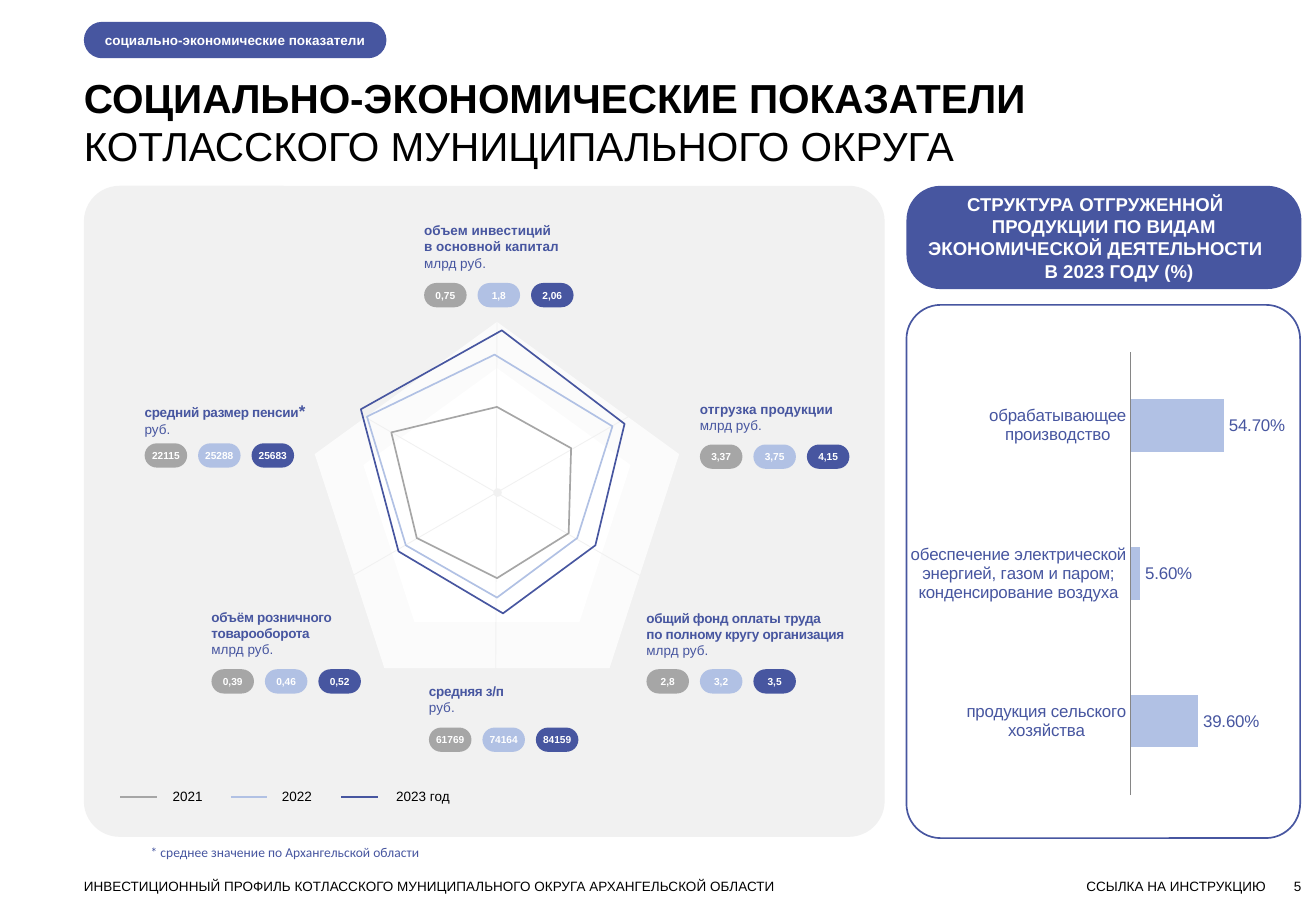
import pptx
import pptx.util
import pptx.chart.data
import pptx.dml.color
import pptx.enum.chart
import pptx.enum.shapes
import pptx.enum.text
import pptx.oxml

RGBColor = pptx.dml.color.RGBColor
INDIGO = RGBColor(0x47, 0x56, 0xA0)
SKY = RGBColor(0xB1, 0xC1, 0xE4)
GRAY = RGBColor(0xA6, 0xA6, 0xA6)
PANEL = RGBColor(0xF1, 0xF1, 0xF1)
PALE = RGBColor(0xFB, 0xFB, 0xFB)
AXIS = RGBColor(0x86, 0x86, 0x86)
WHITE = RGBColor(0xFF, 0xFF, 0xFF)
BLACK = RGBColor(0, 0, 0)
YEAR_COLORS = [GRAY, SKY, INDIGO]

MSO_SHAPE = pptx.enum.shapes.MSO_SHAPE
ALIGN = pptx.enum.text.PP_ALIGN
ANCHOR = pptx.enum.text.MSO_ANCHOR
DRAWING = 'xmlns:a="http://schemas.openxmlformats.org/drawingml/2006/main"'

presentation = pptx.Presentation()
presentation.slide_width = pptx.util.Inches(10.83)
presentation.slide_height = pptx.util.Inches(7.5)
COLUMN = presentation.slide_width // 1083
ROW = presentation.slide_height // 750
slide = presentation.slides.add_slide(presentation.slide_layouts[5])
shapes = slide.shapes


def write(shape, lines, color, align=ALIGN.LEFT, anchor=ANCHOR.TOP, spacing=1.0):
    frame = shape.text_frame
    frame.word_wrap = True
    frame.auto_size = pptx.enum.text.MSO_AUTO_SIZE.NONE
    frame.vertical_anchor = anchor
    frame.margin_left = frame.margin_right = frame.margin_top = frame.margin_bottom = 0
    for index, runs in enumerate(lines):
        paragraph = frame.add_paragraph() if index else frame.paragraphs[0]
        paragraph.alignment = align
        paragraph.line_spacing = spacing
        paragraph.space_before = pptx.util.Pt(0)
        for text, size, bold in runs:
            run = paragraph.add_run()
            run.text = text
            run.font.name = "Arial"
            run.font.size = pptx.util.Pt(size)
            run.font.bold = bold
            run.font.color.rgb = color
    return frame


def place(preset, left, top, width, height, fill, rounding=None):
    shape = shapes.add_shape(preset, left * COLUMN, top * ROW, width * COLUMN, height * ROW)
    shape.shadow.inherit = False
    shape.line.fill.background()
    if fill is None:
        shape.fill.background()
    else:
        shape.fill.solid()
        shape.fill.fore_color.rgb = fill
    if rounding is not None:
        shape.adjustments[0] = rounding
    return shape


title = shapes.title
title.left, title.top, title.width, title.height = 69 * COLUMN, 60 * ROW, 965 * COLUMN, 81 * ROW
write(title, [[("СОЦИАЛЬНО-ЭКОНОМИЧЕСКИЕ ПОКАЗАТЕЛИ", 24, True)],
              [("КОТЛАССКОГО МУНИЦИПАЛЬНОГО ОКРУГА", 24, False)]], BLACK)

section_tag = place(MSO_SHAPE.ROUNDED_RECTANGLE, 69, 18, 249, 30, INDIGO, 0.5)
write(section_tag, [[("социально-экономические показатели", 8, True)]], WHITE, ALIGN.CENTER, ANCHOR.MIDDLE)

place(MSO_SHAPE.ROUNDED_RECTANGLE, 69, 153, 659, 536, PANEL, 0.055)
structure_header = place(MSO_SHAPE.ROUNDED_RECTANGLE, 746, 153, 325, 85, INDIGO, 0.33)
header_lines = [("СТРУКТУРА ОТГРУЖЕННОЙ", 0, 14), ("ПРОДУКЦИИ ПО ВИДАМ", 0, 0),
                ("ЭКОНОМИЧЕСКОЙ ДЕЯТЕЛЬНОСТИ", 0, 14), ("В 2023 ГОДУ (%)", 25, 0)]
header_frame = write(structure_header, [[(text, 11, True)] for text, left, right in header_lines],
                     WHITE, ALIGN.CENTER, ANCHOR.MIDDLE)
for paragraph, (text, left, right) in zip(header_frame.paragraphs, header_lines):
    properties = paragraph._p.get_or_add_pPr()
    properties.set("marL", str(left * COLUMN))
    properties.set("marR", str(right * COLUMN))

structure_panel = place(MSO_SHAPE.ROUNDED_RECTANGLE, 746, 251, 324, 439, None, 0.087)
structure_panel.line.color.rgb = INDIGO
structure_panel.line.width = pptx.util.Pt(1)

chart_data = pptx.chart.data.CategoryChartData(number_format="0.00%")
chart_data.categories = ["продукция сельского хозяйства",
                         "обеспечение электрической энергией, газом и паром; конденсирование воздуха",
                         "обрабатывающее производство"]
chart_data.add_series("Структура", [0.396, 0.056, 0.547])
chart = shapes.add_chart(pptx.enum.chart.XL_CHART_TYPE.BAR_CLUSTERED, 746 * COLUMN, 250 * ROW,
                         324 * COLUMN, 440 * ROW, chart_data).chart
chart.has_legend = False
chart.has_title = False
chart.font.name = "Arial"
chart.font.size = pptx.util.Pt(10)
chart.font.color.rgb = INDIGO
chart.category_axis.major_tick_mark = pptx.enum.chart.XL_TICK_MARK.NONE
chart.category_axis.format.line.color.rgb = AXIS
chart.value_axis.visible = False
chart.value_axis.has_major_gridlines = False
chart.value_axis.minimum_scale = 0
chart.value_axis.maximum_scale = 0.6
plot = chart.plots[0]
plot.gap_width = 182
plot.vary_by_categories = False
plot.series[0].format.fill.solid()
plot.series[0].format.fill.fore_color.rgb = SKY
plot.has_data_labels = True
labels = plot.data_labels
labels.show_value = True
labels.number_format = "0.00%"
labels.number_format_is_linked = False
labels.position = pptx.enum.chart.XL_LABEL_POSITION.OUTSIDE_END
plot_area = chart._chartSpace.chart.plotArea
for old_layout in plot_area.xpath("c:layout"):
    plot_area.remove(old_layout)
plot_area.insert(0, pptx.oxml.parse_xml(
    '<c:layout xmlns:c="http://schemas.openxmlformats.org/drawingml/2006/chart"><c:manualLayout>'
    '<c:layoutTarget val="inner"/><c:xMode val="edge"/><c:yMode val="edge"/>'
    '<c:x val="0.57"/><c:y val="0.09"/><c:w val="0.26"/><c:h val="0.83"/>'
    '</c:manualLayout></c:layout>'))

place(MSO_SHAPE.REGULAR_PENTAGON, 259, 265, 300, 285, PALE)
place(MSO_SHAPE.REGULAR_PENTAGON, 299, 303, 220, 209, WHITE)

spokes = [(409, 265, 408, 550), (519, 342, 290, 474), (298, 342, 527, 474)]
straight_lines = [(spoke, PANEL, 0.5) for spoke in spokes]
for index, (color, year, text_left) in enumerate(zip(YEAR_COLORS, ["2021", "2022", "2023 год"], [142, 232, 326])):
    line_left = 99 + 91 * index
    straight_lines.append(((line_left, 656, line_left + 30, 656), color, 1))
    year_label = shapes.add_textbox(text_left * COLUMN, 649 * ROW, 80 * COLUMN, 13 * ROW)
    write(year_label, [[(year, 8, False)]], BLACK)
for (start_x, start_y, end_x, end_y), color, weight in straight_lines:
    connector = shapes.add_connector(pptx.enum.shapes.MSO_CONNECTOR.STRAIGHT, start_x * COLUMN,
                                     start_y * ROW, end_x * COLUMN, end_y * ROW)
    connector.line.color.rgb = color
    connector.line.width = pptx.util.Pt(weight)
    connector._element.spPr.append(pptx.oxml.parse_xml(f"<a:effectLst {DRAWING}/>"))
place(MSO_SHAPE.OVAL, 406, 402, 7, 7, PANEL)

indicators = [
    (349, 183, 233, ["объем инвестиций", "в основной капитал"], "млрд руб.", ["0,75", "1,8", "2,06"], 0),
    (576, 330, 366, ["отгрузка продукции"], "млрд руб.", ["3,37", "3,75", "4,15"], 0),
    (532, 502, 551, ["общий фонд оплаты труда", "по полному кругу организация"], "млрд руб.",
     ["2,8", "3,2", "3,5"], -20),
    (174, 501, 551, ["объём розничного", "товарооборота"], "млрд руб.", ["0,39", "0,46", "0,52"], -20),
    (119, 330, 365, ["средний размер пенсии"], "руб.", ["22115", "25288", "25683"], -20),
    (353, 562, 599, ["средняя з/п"], "руб.", ["61769", "74164", "84159"], -20),
]
for left, top, pill_top, names, measure, values, tracking in indicators:
    lines = [[(name, 8, True)] for name in names]
    if "пенсии" in names[0]:
        lines[0].append(("*", 10, True))
    lines.append([(measure, 8, False)])
    caption = shapes.add_textbox(left * COLUMN, top * ROW, 171 * COLUMN, 13 * len(lines) * ROW)
    frame = write(caption, lines, INDIGO)
    for paragraph in frame.paragraphs[:-1]:
        for run in paragraph.runs:
            run._r.get_or_add_rPr().set("spc", str(tracking))
    for index, (value, color) in enumerate(zip(values, YEAR_COLORS)):
        pill = place(MSO_SHAPE.ROUNDED_RECTANGLE, left + 44 * index, pill_top, 35, 20, color, 0.5)
        write(pill, [[(value, 6, True)]], WHITE, ALIGN.CENTER, ANCHOR.MIDDLE)

year_outlines = [
    [(322, 356), (409, 335), (470, 369), (468, 439), (409, 476), (343, 443)],
    [(302, 343), (407, 292), (504, 351), (475, 443), (409, 492), (334, 449)],
    [(297, 337), (413, 272), (514, 349), (490, 449), (414, 505), (328, 454)],
]
for points, color in zip(year_outlines, YEAR_COLORS):
    builder = shapes.build_freeform(*points[0], scale=(COLUMN, ROW))
    builder.add_line_segments(points[1:], close=True)
    outline = builder.convert_to_shape()
    outline.shadow.inherit = False
    outline.fill.background()
    outline.line.color.rgb = color
    outline.line.width = pptx.util.Pt(1)

footers = [(69, 800, "ИНВЕСТИЦИОННЫЙ ПРОФИЛЬ КОТЛАССКОГО МУНИЦИПАЛЬНОГО ОКРУГА АРХАНГЕЛЬСКОЙ ОБЛАСТИ", ALIGN.LEFT),
           (869, 173, "ССЫЛКА НА ИНСТРУКЦИЮ", ALIGN.RIGHT), (991, 80, "5", ALIGN.RIGHT)]
for left, width, text, align in footers:
    footer = shapes.add_textbox(left * COLUMN, 723 * ROW, width * COLUMN, 13 * ROW)
    write(footer, [[(text, 8, False)]], BLACK, align)

footnote = shapes.add_textbox(124 * COLUMN, 695 * ROW, 238 * COLUMN, 14 * ROW)
footnote_frame = write(footnote, [[("* среднее значение по Архангельской области", 8, False)]], INDIGO)
footnote_frame.paragraphs[0].runs[0].font.name = "Calibri"

presentation.save("out.pptx")
